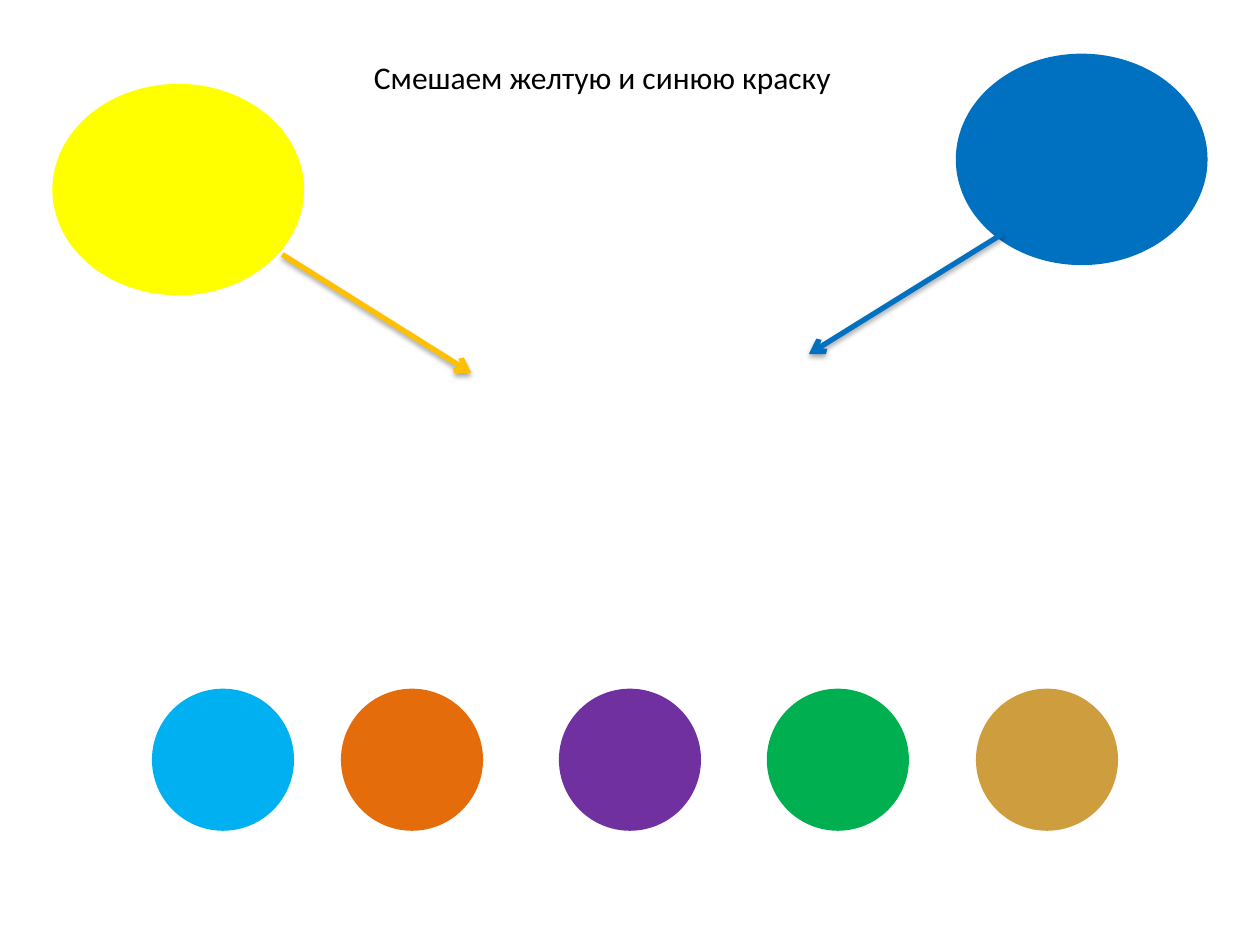
import dataclasses

import lxml.etree
import pptx
import pptx.dml.color
import pptx.enum.shapes
import pptx.enum.text
import pptx.oxml.ns
import pptx.slide
import pptx.util


@dataclasses.dataclass(frozen=True)
class Theme:
    font: str = "Calibri"
    title_size: float = 18
    outline_width: float = 2
    arrow_width: float = 3
    text: str = "000000"
    shadow: str = "000000"
    yellow: str = "FFFF00"
    amber: str = "FFC000"
    blue: str = "0070C0"
    sky: str = "00B0F0"
    orange: str = "E46C0A"
    violet: str = "7030A0"
    green: str = "00B050"
    ochre: str = "CE9E3E"


@dataclasses.dataclass(frozen=True)
class Paint:
    left: float
    top: float
    width: float
    height: float
    color: str


@dataclasses.dataclass(frozen=True)
class Arrow:
    start: tuple[float, float]
    end: tuple[float, float]
    color: str


THEME = Theme()
SWATCH_TOP = 5.48
SWATCH_SIZE = 1.1

MIXED_PAINTS = [
    Paint(0.43, 0.68, 1.97, 1.65, THEME.yellow),
    Paint(7.6, 0.44, 1.97, 1.65, THEME.blue),
]
ARROWS = [
    Arrow((2.24, 2.02), (3.74, 2.96), THEME.amber),
    Arrow((7.95, 1.86), (6.42, 2.81), THEME.blue),
]
ANSWER_PAINTS = [
    Paint(left, SWATCH_TOP, SWATCH_SIZE, SWATCH_SIZE, color)
    for left, color in [
        (1.22, THEME.sky),
        (2.72, THEME.orange),
        (4.45, THEME.violet),
        (6.1, THEME.green),
        (7.76, THEME.ochre),
    ]
]


def rgb(color: str) -> pptx.dml.color.RGBColor:
    return pptx.dml.color.RGBColor.from_string(color)


def draw_paint(slide: pptx.slide.Slide, paint: Paint) -> None:
    shape = slide.shapes.add_shape(
        pptx.enum.shapes.MSO_SHAPE.OVAL,
        pptx.util.Inches(paint.left),
        pptx.util.Inches(paint.top),
        pptx.util.Inches(paint.width),
        pptx.util.Inches(paint.height),
    )
    shape.shadow.inherit = False
    shape.fill.solid()
    shape.fill.fore_color.rgb = rgb(paint.color)
    shape.line.color.rgb = rgb(paint.color)
    shape.line.width = pptx.util.Pt(THEME.outline_width)


def draw_arrow(slide: pptx.slide.Slide, arrow: Arrow) -> None:
    connector = slide.shapes.add_connector(
        pptx.enum.shapes.MSO_CONNECTOR.STRAIGHT,
        *(pptx.util.Inches(value) for value in arrow.start + arrow.end),
    )
    connector.line.color.rgb = rgb(arrow.color)
    connector.line.width = pptx.util.Pt(THEME.arrow_width)
    qualified = pptx.oxml.ns.qn
    properties = connector.element.spPr
    lxml.etree.SubElement(
        properties.find(qualified("a:ln")), qualified("a:tailEnd"), type="arrow"
    )
    effects = lxml.etree.SubElement(properties, qualified("a:effectLst"))
    shadow = lxml.etree.SubElement(
        effects,
        qualified("a:outerShdw"),
        blurRad=str(pptx.util.Pt(3.1)),
        dist=str(pptx.util.Pt(1.8)),
        dir="5400000",
        rotWithShape="0",
    )
    color = lxml.etree.SubElement(shadow, qualified("a:srgbClr"), val=THEME.shadow)
    lxml.etree.SubElement(color, qualified("a:alpha"), val="35000")


def draw_title(slide: pptx.slide.Slide, text: str) -> None:
    box = slide.shapes.add_textbox(
        pptx.util.Inches(2.87),
        pptx.util.Inches(0.41),
        pptx.util.Inches(3.87),
        pptx.util.Inches(0.4),
    )
    box.text_frame.word_wrap = False
    box.text_frame.auto_size = pptx.enum.text.MSO_AUTO_SIZE.SHAPE_TO_FIT_TEXT
    run = box.text_frame.paragraphs[0].add_run()
    run.text = text
    run.font.name = THEME.font
    run.font.size = pptx.util.Pt(THEME.title_size)
    run.font.color.rgb = rgb(THEME.text)


def main() -> None:
    presentation = pptx.Presentation()
    presentation.slide_width = pptx.util.Inches(10)
    presentation.slide_height = pptx.util.Inches(7.5)
    slide = presentation.slides.add_slide(presentation.slide_layouts[6])
    for paint in MIXED_PAINTS:
        draw_paint(slide, paint)
    for arrow in ARROWS:
        draw_arrow(slide, arrow)
    for paint in ANSWER_PAINTS:
        draw_paint(slide, paint)
    draw_title(slide, "Смешаем желтую и синюю краску")
    presentation.save("out.pptx")


if __name__ == "__main__":
    main()
